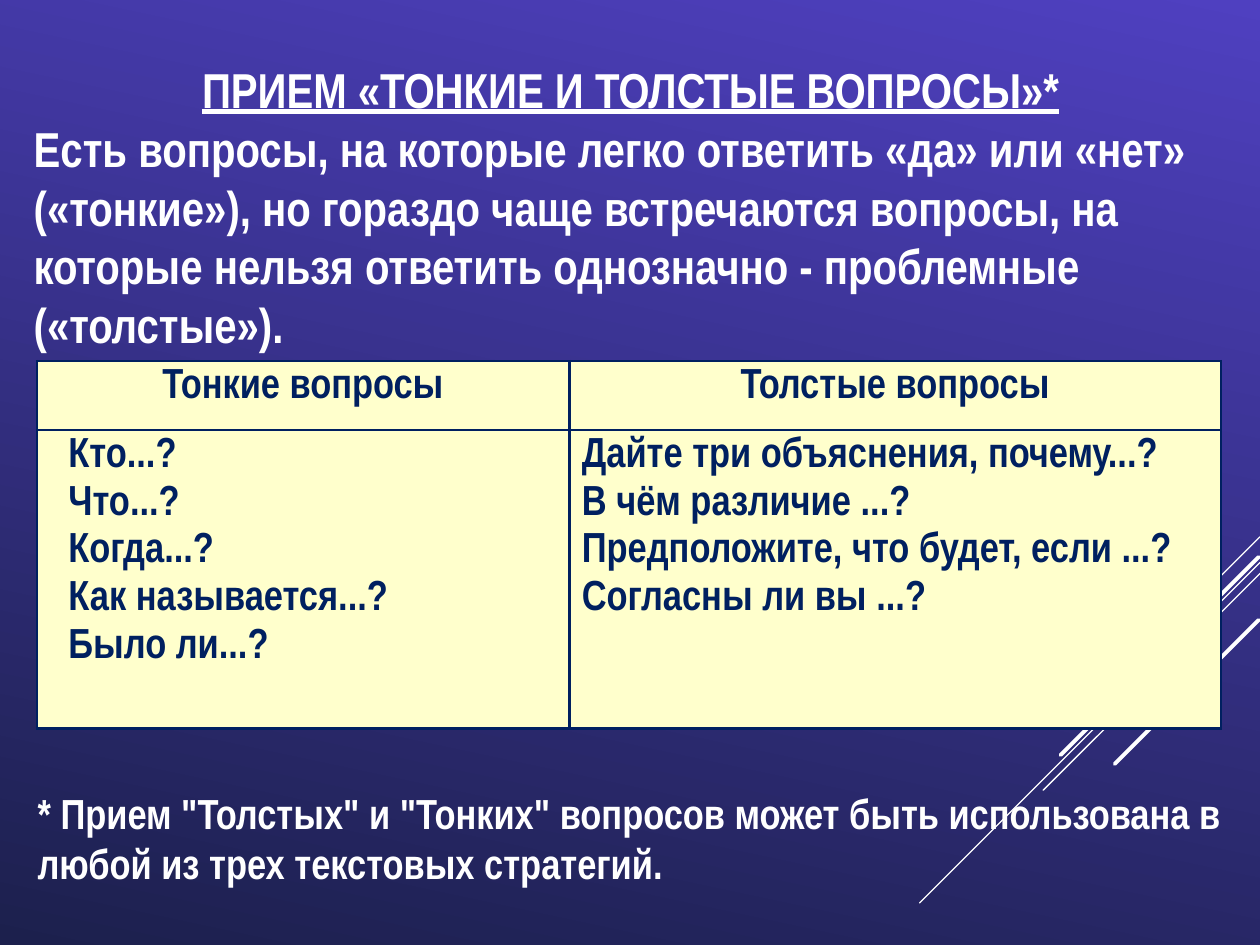
"""Build a slide on thin and thick questions with a two-column table."""
from lxml import etree
from pptx import Presentation
from pptx.dml.color import RGBColor
from pptx.enum.shapes import MSO_CONNECTOR
from pptx.enum.text import MSO_ANCHOR, PP_ALIGN
from pptx.oxml.ns import qn
from pptx.util import Cm, Pt

LINE = MSO_CONNECTOR.STRAIGHT
MID, TOP = MSO_ANCHOR.MIDDLE, MSO_ANCHOR.TOP
LEFT, MAIN = PP_ALIGN.LEFT, PP_ALIGN.CENTER
WHITE, NAVY, CREAM = "FFFFFF", "002060", "FFFFCC"


def tint(code):
    return RGBColor.from_string(code)


def write(frame, lines, size, code, gap):
    for num, (text, form) in enumerate(lines):
        para = frame.paragraphs[0] if num == 0 else frame.add_paragraph()
        para.alignment = form.get("align", LEFT)
        para.space_before = Pt(gap)
        run = para.add_run()
        run.text = text
        font = {"name": "Arial Narrow", "size": Pt(size), "bold": True,
                "underline": form.get("under", False)}
        for key, val in font.items():
            setattr(run.font, key, val)
        run.font.color.rgb = tint(code)


deck = Presentation()
deck.slide_width, deck.slide_height = Cm(25.4), Cm(19.05)
slide = deck.slides.add_slide(deck.slide_layouts[6])

back = slide.background.fill
back.gradient()
back.gradient_angle = 258
for stop, code, spot in zip(back.gradient_stops, ("4F40C0", "1C204D"), (0, 1)):
    stop.color.rgb = tint(code)
    stop.position = spot

rays = [(25.4, 10.82, 2.11, 0.75), (25.4, 11.34, 6.86, 0.75),
        (25.4, 11.56, 4.37, 0.75), (25.37, 11.23, 3.99, 2.25),
        (25.37, 12.5, 2.9, 2.25)]
for x, y, span, width in rays:
    ray = slide.shapes.add_connector(
        LINE, Cm(x), Cm(y), Cm(x - span), Cm(y + span))
    ray.line.color.rgb = tint(WHITE)
    ray.line.width = Pt(width)
    ray.get_or_add_ln().set("cap", "rnd")
    etree.SubElement(ray._element.spPr, qn("a:effectLst"))

title = [
    ("ПРИЕМ «ТОНКИЕ И ТОЛСТЫЕ ВОПРОСЫ»*", {"align": MAIN, "under": True}),
    ("Есть вопросы, на которые легко ответить «да» или «нет» («тонкие»), "
     "но гораздо чаще встречаются вопросы, на которые нельзя ответить "
     "однозначно - проблемные («толстые»).", {}),
]
note = [("* Прием \"Толстых\" и \"Тонких\" вопросов может быть использована "
         "в любой из трех текстовых стратегий.", {})]
boxes = [((0.43, 1.04, 24.56, 6.25), title, 28, MID),
         ((0.51, 15.75, 24.36, 2.31), note, 24, TOP)]
for place, lines, size, hold in boxes:
    frame = slide.shapes.add_textbox(*map(Cm, place)).text_frame
    for key, val in {"word_wrap": True, "vertical_anchor": hold}.items():
        setattr(frame, key, val)
    write(frame, lines, size, WHITE, 0)

heads = ["Тонкие вопросы", "Толстые вопросы"]
asks = [
    ["Кто...?", "Что...?", "Когда...?", "Как называется...?", "Было ли...?"],
    ["Дайте три объяснения, почему...?", "В чём различие ...?",
     "Предположите, что будет, если ...?", "Согласны ли вы ...?"],
]
rows = [[[(head, {"align": MAIN})] for head in heads],
        [[(ask, {}) for ask in group] for group in asks]]
grid = slide.shapes.add_table(
    2, 2, Cm(0.74), Cm(7.28), Cm(23.87), Cm(7.39)).table
for col, width in zip(grid.columns, (10.74, 13.13)):
    col.width = Cm(width)
for row, height in zip(grid.rows, (1.39, 6)):
    row.height = Cm(height)
for r, row in enumerate(rows):
    for c, lines in enumerate(row):
        cell = grid.cell(r, c)
        inset = 0.64 if (r, c) == (1, 0) else 0.25
        form = {"margin_left": Cm(inset), "margin_top": Cm(0.13),
                "vertical_anchor": TOP}
        for key, val in form.items():
            setattr(cell, key, val)
        write(cell.text_frame, lines, 24, NAVY, 4.8)
        props = cell._tc.get_or_add_tcPr()
        for side in ("lnL", "lnR", "lnT", "lnB"):
            edge = etree.SubElement(props, qn("a:" + side), w=str(Pt(1.5)))
            fill = etree.SubElement(edge, qn("a:solidFill"))
            etree.SubElement(fill, qn("a:srgbClr"), val=NAVY)
        cell.fill.solid()
        cell.fill.fore_color.rgb = tint(CREAM)

deck.save("out.pptx")
